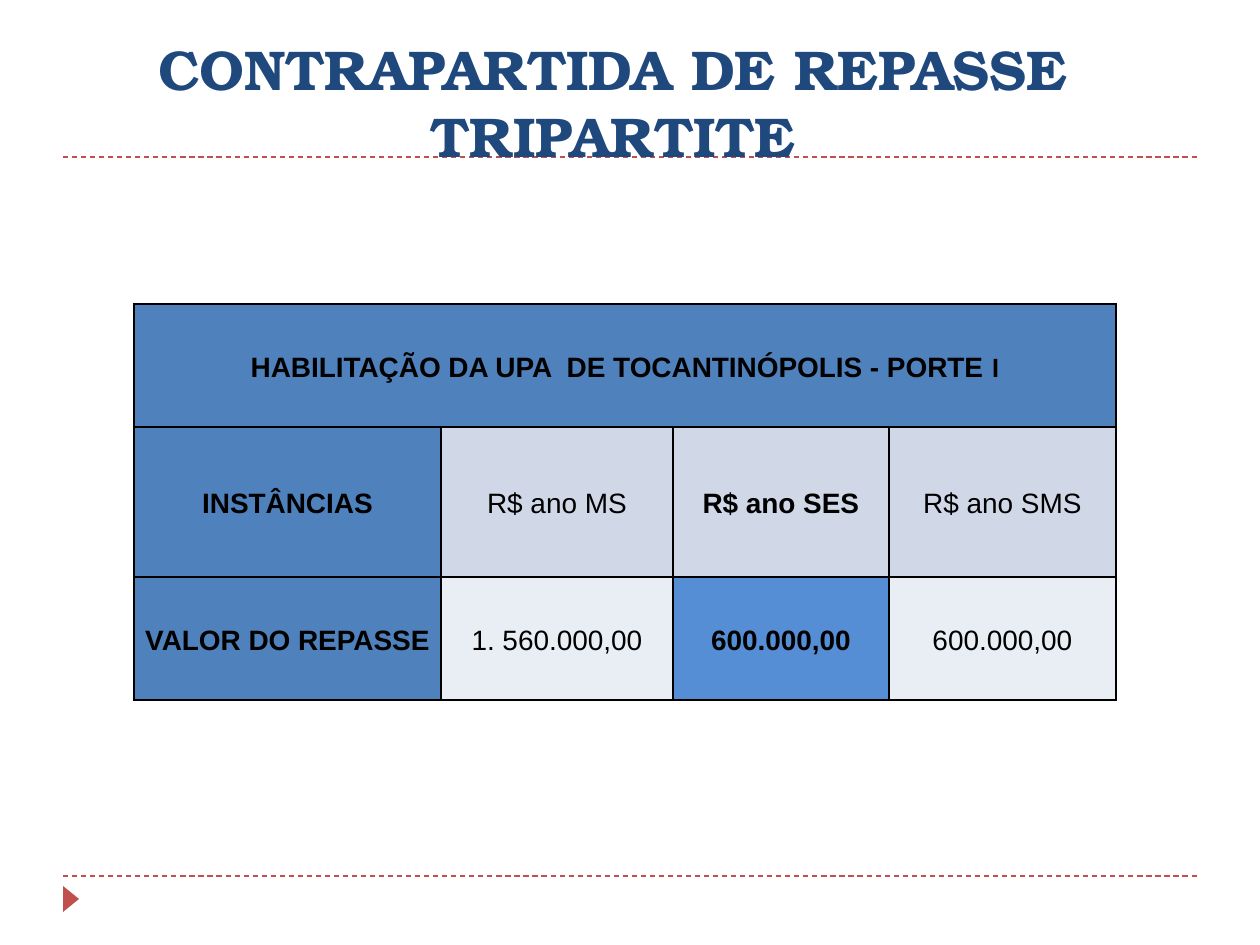
import pptx
import pptx.util
import pptx.dml.color
import pptx.enum.dml
import pptx.enum.shapes
import pptx.enum.text
import pptx.oxml.ns
from lxml import etree

RGB = pptx.dml.color.RGBColor
RED = RGB(0xC0, 0x50, 0x4D)
NAVY = RGB(0x1F, 0x49, 0x7D)
BLACK = RGB(0x00, 0x00, 0x00)
BLUE = RGB(0x4F, 0x81, 0xBD)
BRIGHT = RGB(0x55, 0x8E, 0xD5)
PALE = RGB(0xD0, 0xD8, 0xE8)
PALER = RGB(0xE9, 0xED, 0xF4)

PX_PER_INCH = 126
MIDDLE = pptx.enum.text.MSO_ANCHOR.MIDDLE
BOTTOM = pptx.enum.text.MSO_ANCHOR.BOTTOM


def px(n):
    return pptx.util.Emu(round(n * 914400 / PX_PER_INCH))


def add_run(p, text, size=16, font="Arial", color=BLACK, bold=False):
    r = p.add_run()
    r.text = text
    r.font.size = pptx.util.Pt(size)
    r.font.name = font
    r.font.color.rgb = color
    r.font.bold = bold


def add_child(parent, tag, **attrs):
    return etree.SubElement(parent, pptx.oxml.ns.qn(tag), attrs)


class Deck:
    def __init__(self, width, height):
        self.prs = pptx.Presentation()
        self.prs.slide_width = px(width)
        self.prs.slide_height = px(height)
        self.s = self.prs.slides.add_slide(self.prs.slide_layouts[6])

    def dashed_rule(self, x1, x2, y):
        line = self.s.shapes.add_connector(
            pptx.enum.shapes.MSO_CONNECTOR.STRAIGHT, px(x1), px(y), px(x2), px(y))
        line.line.color.rgb = RED
        line.line.width = pptx.util.Pt(0.75)
        line.line.dash_style = pptx.enum.dml.MSO_LINE.DASH
        add_child(line._element.spPr, "a:effectLst")

    def triangle(self, x, y, w, h, rotation):
        sp = self.s.shapes.add_shape(
            pptx.enum.shapes.MSO_SHAPE.ISOSCELES_TRIANGLE, px(x), px(y), px(w), px(h))
        sp.rotation = rotation
        sp.shadow.inherit = False
        sp.fill.solid()
        sp.fill.fore_color.rgb = RED
        sp.line.fill.background()

    def title(self, text, x, y, w, h):
        tf = self.s.shapes.add_textbox(px(x), px(y), px(w), px(h)).text_frame
        tf.word_wrap = True
        tf.vertical_anchor = BOTTOM
        p = tf.paragraphs[0]
        p.alignment = pptx.enum.text.PP_ALIGN.CENTER
        add_run(p, text, size=32, font="TeX Gyre Bonum", color=NAVY, bold=True)

    def table(self, x, y, cols, rows):
        frame = self.s.shapes.add_table(
            len(rows), len(cols), px(x), px(y), px(sum(cols)), px(sum(rows)))
        table = frame.table
        table.first_row = table.horz_banding = False
        for column, width in zip(table.columns, cols):
            column.width = px(width)
        for row, height in zip(table.rows, rows):
            row.height = px(height)
        for cell in table.iter_cells():
            self.borders(cell)
        return table

    def borders(self, cell):
        tcPr = cell._tc.get_or_add_tcPr()
        for side in ("a:lnL", "a:lnR", "a:lnT", "a:lnB"):
            ln = add_child(tcPr, side, w=str(pptx.util.Pt(1)))
            add_child(add_child(ln, "a:solidFill"), "a:srgbClr", val=str(BLACK))

    def cell(self, cell, text, fill, bold):
        cell.fill.solid()
        cell.fill.fore_color.rgb = fill
        cell.vertical_anchor = MIDDLE
        cell.margin_left = cell.margin_right = px(6)
        cell.margin_top = cell.margin_bottom = 0
        p = cell.text_frame.paragraphs[0]
        p.alignment = pptx.enum.text.PP_ALIGN.CENTER
        p.line_spacing = 1.15
        add_run(p, text, bold=bold)
        return p


def main():
    deck = Deck(1260, 945)

    # Rules and corner marker
    for y in (876, 157):
        deck.dashed_rule(63, 1197, y)
    deck.triangle(58, 891, 26, 16, rotation=90)

    # Title
    deck.title("CONTRAPARTIDA DE REPASSE TRIPARTITE", 36, 66, 1154, 109)

    # Transfer table: merged heading, then one row per item
    table = deck.table(134, 304, cols=(307, 232, 216, 227), rows=(123, 150, 123))
    heading = table.cell(0, 0)
    heading.merge(table.cell(0, 3))
    p = deck.cell(heading, "HABILITAÇÃO DA UPA  DE TOCANTINÓPOLIS - PORTE ", BLUE, True)
    add_run(p, "I", font="Calibri", bold=True)

    body = (
        (("INSTÂNCIAS", "R$ ano MS", "R$ ano SES", "R$ ano SMS"),
         (BLUE, PALE, PALE, PALE)),
        (("VALOR DO REPASSE", "1. 560.000,00", "600.000,00", "600.000,00"),
         (BLUE, PALER, BRIGHT, PALER)),
    )
    for i, (texts, fills) in enumerate(body, start=1):
        for j, (text, fill) in enumerate(zip(texts, fills)):
            deck.cell(table.cell(i, j), text, fill, bold=j in (0, 2))

    deck.prs.save("out.pptx")


if __name__ == "__main__":
    main()
